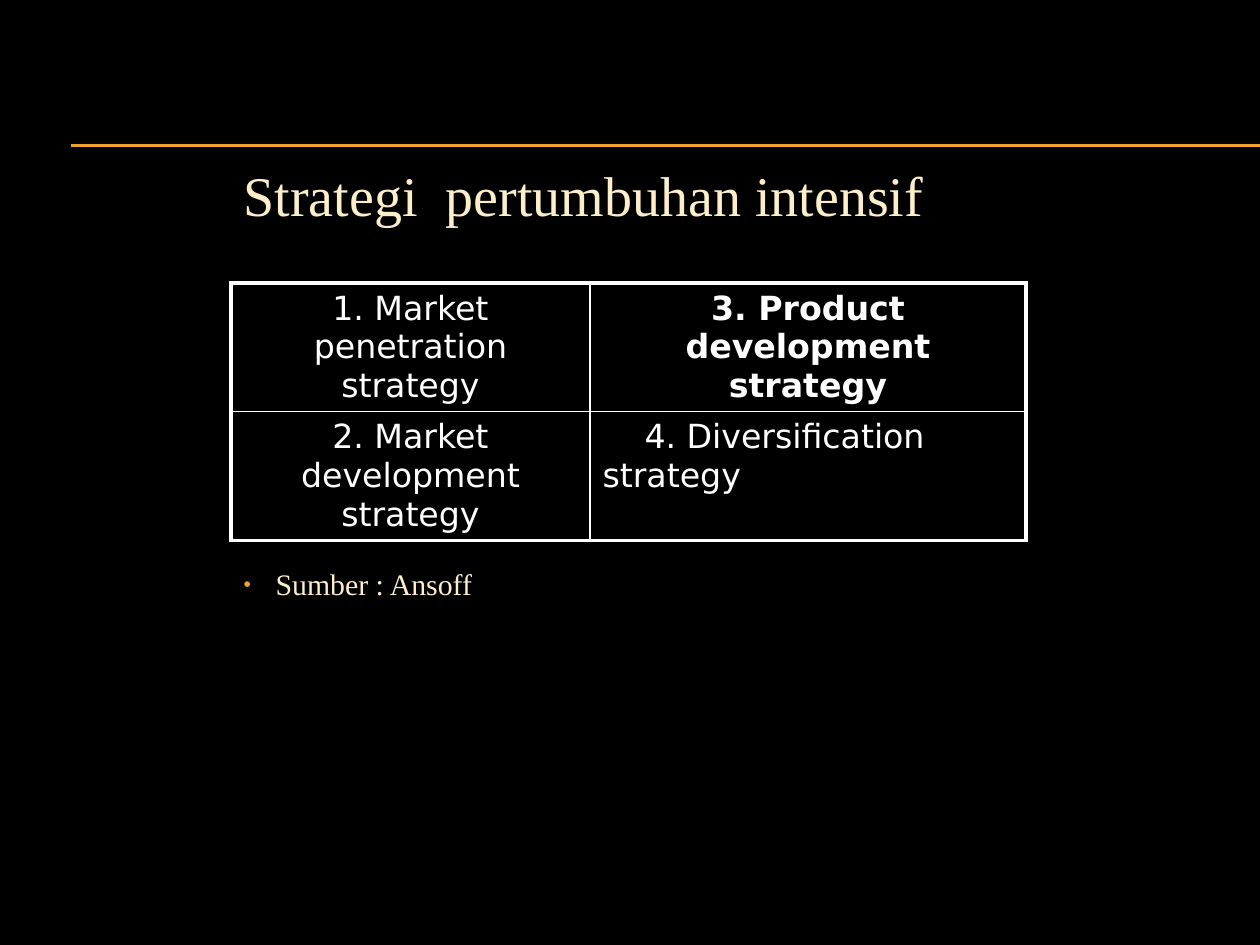
"""Builds a slide on intensive growth strategies with a two-by-two matrix."""
import pptx
import pptx.dml.color
import pptx.enum.shapes
import pptx.enum.text
import pptx.oxml.ns
import pptx.oxml.xmlchemy
import pptx.util
import lxml.etree

HEADING = "Strategi  pertumbuhan intensif"
CITATION = "Sumber : Ansoff"
STRATEGIES = [
    ["1. Market penetration strategy", "3. Product development strategy"],
    ["2. Market development strategy", "4. Diversification strategy"],
]
BOLD_CELL, INDENTED_CELL = (0, 1), (1, 1)
COLUMN_WIDTHS, ROW_HEIGHTS = [359, 436], [128, 129]
RULE_YS = [145, 146]
BLACK, WHITE, CREAM, ORANGE = "000000", "FFFFFF", "FBEEC9", "F0A22E"
SERIF, SANS = "Times New Roman", "DejaVu Sans"
OUTER_PT, INNER_PT = 2.25, 1


def px(length):
    return pptx.util.Emu(round(length * 914400 / 126))


def rgb(value):
    return pptx.dml.color.RGBColor.from_string(value)


def add_xml(parent, tag, **attributes):
    return lxml.etree.SubElement(
        parent, pptx.oxml.ns.qn(tag), {key: str(value) for key, value in attributes.items()}
    )


def add_run(paragraph, text, size, font, color, bold=False):
    run = paragraph.add_run()
    run.text = text
    run.font.size = pptx.util.Pt(size)
    run.font.name = font
    run.font.bold = bold
    run.font.color.rgb = rgb(color)


def fill_placeholder(placeholder, box, text, size):
    placeholder.left, placeholder.top, placeholder.width, placeholder.height = map(px, box)
    frame = placeholder.text_frame
    frame.vertical_anchor = pptx.enum.text.MSO_ANCHOR.MIDDLE
    line = frame.paragraphs[0]
    line.alignment = pptx.enum.text.PP_ALIGN.LEFT
    add_run(line, text, size, SERIF, CREAM)
    return line


def add_rule(slide, y):
    rule = slide.shapes.add_connector(
        pptx.enum.shapes.MSO_CONNECTOR.STRAIGHT, px(71), px(y), px(1260), px(y)
    )
    rule.line.color.rgb = rgb(ORANGE)
    rule.line.width = pptx.util.Pt(0.75)
    add_xml(rule._element.spPr, "a:effectLst")


def add_border(cell, side, width):
    border = add_xml(cell._tc.get_or_add_tcPr(), f"a:ln{side}", w=pptx.util.Pt(width))
    add_xml(add_xml(border, "a:solidFill"), "a:srgbClr", val=WHITE)


def add_matrix(slide):
    last_row, last_column = len(ROW_HEIGHTS) - 1, len(COLUMN_WIDTHS) - 1
    matrix = slide.shapes.add_table(
        len(ROW_HEIGHTS), len(COLUMN_WIDTHS), px(231), px(283),
        px(sum(COLUMN_WIDTHS)), px(sum(ROW_HEIGHTS)),
    ).table
    matrix.first_row = matrix.horz_banding = False
    for column, width in zip(matrix.columns, COLUMN_WIDTHS):
        column.width = px(width)
    for row, height in zip(matrix.rows, ROW_HEIGHTS):
        row.height = px(height)
    for r, names in enumerate(STRATEGIES):
        for c, name in enumerate(names):
            cell = matrix.cell(r, c)
            line = cell.text_frame.paragraphs[0]
            if (r, c) == INDENTED_CELL:
                line._p.get_or_add_pPr().set("indent", str(px(42)))
            else:
                line.alignment = pptx.enum.text.PP_ALIGN.CENTER
            add_run(line, name, 19, SANS, WHITE, (r, c) == BOLD_CELL)
            outer_sides = {"L": c == 0, "R": c == last_column, "T": r == 0, "B": r == last_row}
            for side, is_outer in outer_sides.items():
                add_border(cell, side, OUTER_PT if is_outer else INNER_PT)
            cell.fill.background()


def main():
    deck = pptx.Presentation()
    deck.slide_width, deck.slide_height = px(1260), px(945)
    slide = deck.slides.add_slide(deck.slide_layouts[1])
    slide.background.fill.solid()
    slide.background.fill.fore_color.rgb = rgb(BLACK)
    for y in RULE_YS:
        add_rule(slide, y)
    heading, citation = slide.placeholders
    fill_placeholder(heading, (231, 150, 795, 88), HEADING, 32)
    source = fill_placeholder(citation, (231, 560, 795, 48), CITATION, 17)
    bullet = source._p.get_or_add_pPr()
    bullet.set("marL", str(px(32)))
    bullet.set("indent", str(px(-32)))
    add_xml(add_xml(bullet, "a:buClr"), "a:srgbClr", val=ORANGE)
    add_xml(bullet, "a:buSzPct", val=70000)
    add_xml(bullet, "a:buChar", char="•")
    add_matrix(slide)
    deck.save("out.pptx")


if __name__ == "__main__":
    main()
